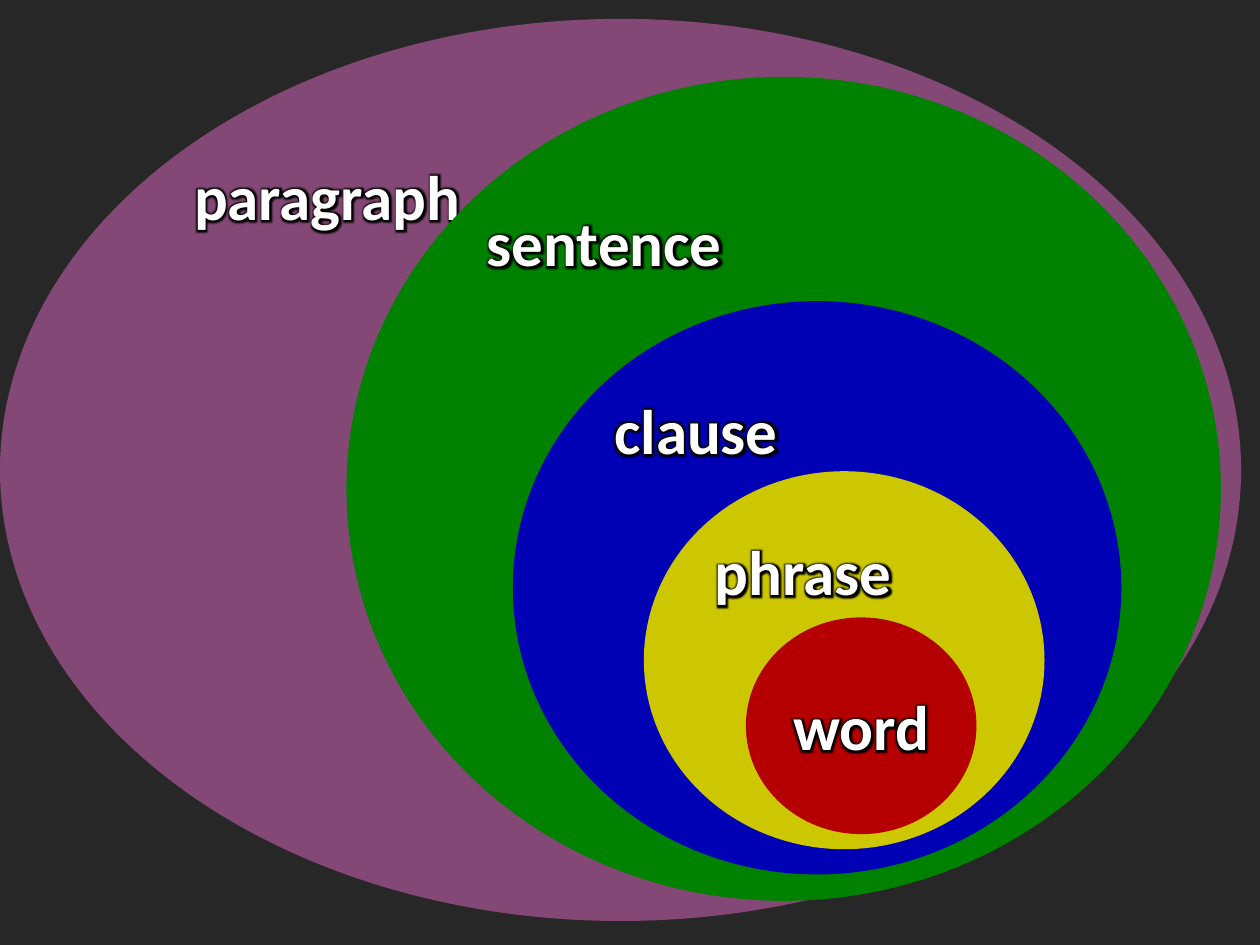
from dataclasses import dataclass

from lxml import etree
from pptx import Presentation
from pptx.dml.color import RGBColor
from pptx.enum import shapes, text
from pptx.oxml.ns import qn
from pptx.util import Inches, Pt


@dataclass(frozen=True)
class Theme:
    background: str = "272727"
    label: str = "FFFFFF"
    glow: str = "000000"
    font: str = "Calibri"
    label_size: int = 36
    glow_radius: int = 5


THEME = Theme()

# unit, fill, (left, top, width, height), from the outermost inwards
UNITS = [
    ("paragraph", "834875", (0, 0.15, 9.85, 7.16)),
    ("sentence", "008200", (2.75, 0.61, 6.94, 6.54)),
    ("clause", "0000B4", (4.07, 2.39, 4.83, 4.55)),
    ("phrase", "CCC700", (5.11, 3.74, 3.18, 3)),
    ("word", "B40000", (5.92, 4.9, 1.83, 1.72)),
]


def add_glow(run):
    fill = run.font._element.find(qn("a:solidFill"))
    effects = etree.Element(qn("a:effectLst"))
    glow = etree.SubElement(effects, qn("a:glow"), rad=str(Pt(THEME.glow_radius)))
    etree.SubElement(glow, qn("a:srgbClr"), val=THEME.glow)
    fill.addnext(effects)


def add_unit(slide, unit, fill, box, innermost):
    """Draw one nested ellipse; only the innermost has its label in the middle."""
    ellipse = slide.shapes.add_shape(
        shapes.MSO_SHAPE.OVAL, *(Inches(length) for length in box))
    ellipse.shadow.inherit = False
    ellipse.fill.solid()
    ellipse.fill.fore_color.rgb = RGBColor.from_string(fill)
    ellipse.line.fill.background()

    frame = ellipse.text_frame
    frame.word_wrap = not innermost
    frame.vertical_anchor = (
        text.MSO_ANCHOR.MIDDLE if innermost else text.MSO_ANCHOR.TOP)
    paragraph = frame.paragraphs[0]
    paragraph.alignment = text.PP_ALIGN.CENTER if innermost else text.PP_ALIGN.LEFT
    run = paragraph.add_run()
    run.text = unit
    label_format = {"name": THEME.font, "size": Pt(THEME.label_size), "bold": True}
    for name, value in label_format.items():
        setattr(run.font, name, value)
    run.font.color.rgb = RGBColor.from_string(THEME.label)
    add_glow(run)


def main():
    deck = Presentation()
    deck.slide_width, deck.slide_height = Inches(10), Inches(7.5)
    slide = deck.slides.add_slide(deck.slide_layouts.get_by_name("Blank"))
    slide.background.fill.solid()
    slide.background.fill.fore_color.rgb = RGBColor.from_string(THEME.background)
    for unit, fill, box in UNITS:
        add_unit(slide, unit, fill, box, innermost=unit == UNITS[-1][0])
    deck.save("out.pptx")


if __name__ == "__main__":
    main()
